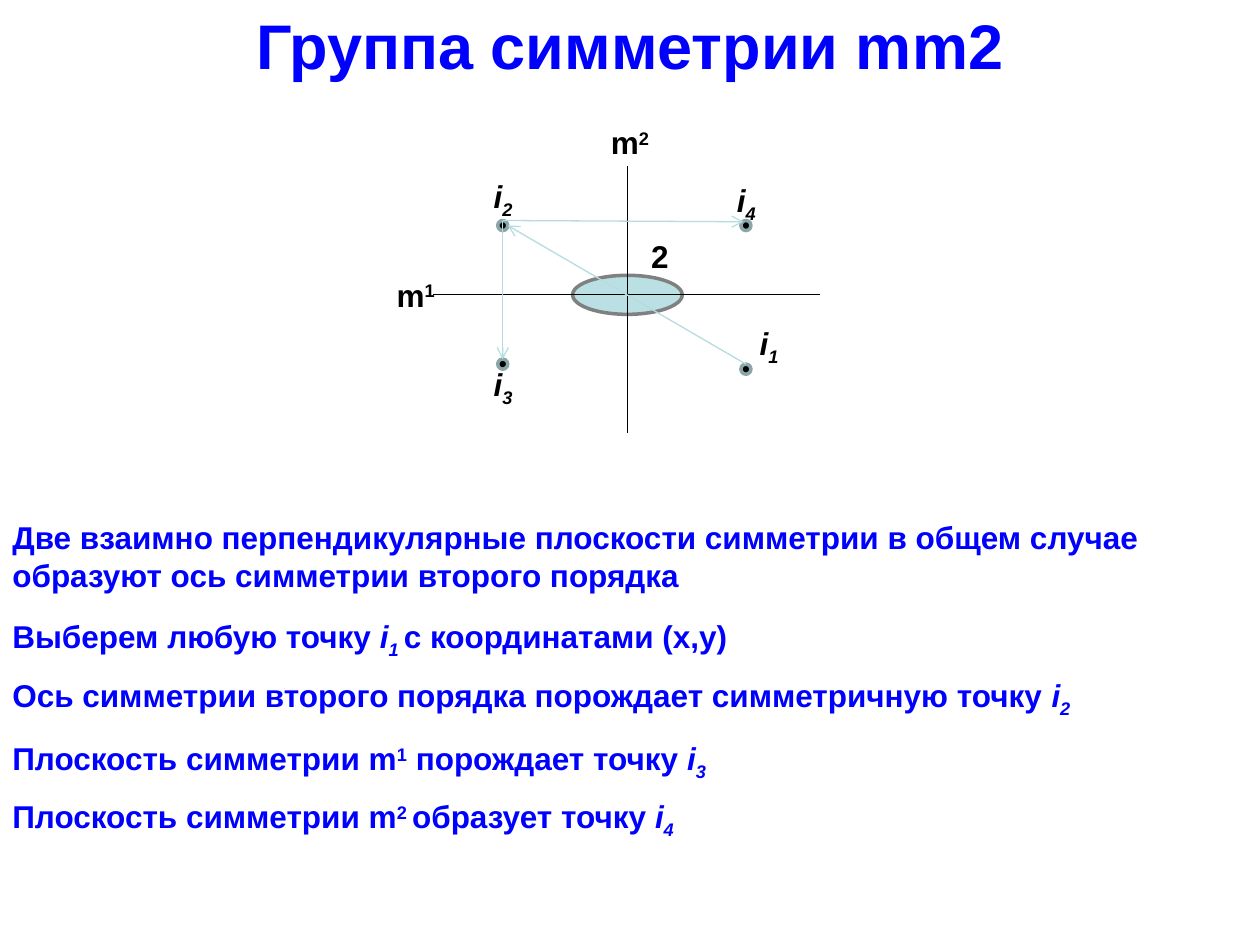
from lxml.etree import SubElement
from pptx import Presentation
from pptx.dml.color import RGBColor
from pptx.enum.shapes import MSO_CONNECTOR, MSO_SHAPE
from pptx.enum.text import MSO_ANCHOR, MSO_AUTO_SIZE, PP_ALIGN
from pptx.oxml.ns import qn
from pptx.util import Inches, Pt

BLUE = RGBColor(0x00, 0x00, 0xFF)
BLACK = RGBColor(0x00, 0x00, 0x00)
WHITE = RGBColor(0xFF, 0xFF, 0xFF)
GRAY = RGBColor(0x80, 0x80, 0x80)
AQUA = RGBColor(0xBB, 0xE0, 0xE3)
TEAL = RGBColor(0x8A, 0xA6, 0xA8)
PALE = RGBColor(0xB6, 0xDC, 0xDF)

BASE = {"name": "Arial", "size": Pt(18), "bold": True}
SHIFT = {"sup": 30000, "sub": -25000}


def apply(item, form):
    for key, value in form.items():
        setattr(item, key, value)


def write(shape, runs, color, wrap=True, align=PP_ALIGN.LEFT, size=Pt(18)):
    frame = shape.text_frame
    apply(frame, {"word_wrap": wrap, "auto_size": MSO_AUTO_SIZE.SHAPE_TO_FIT_TEXT,
                  "vertical_anchor": MSO_ANCHOR.TOP})
    para = frame.paragraphs[0]
    para.alignment = align
    for text, kind in runs:
        run = para.add_run()
        run.text = text
        apply(run.font, BASE | {"size": size, "italic": kind in ("var", "sub")})
        run.font.color.rgb = color
        if kind in SHIFT:
            run.font._element.set("baseline", str(SHIFT[kind]))


def oval(slide, mid, size, fill, edge):
    (x, y), (w, h) = mid, size
    shape = slide.shapes.add_shape(MSO_SHAPE.OVAL, Inches(x - w / 2), Inches(y - h / 2),
                                   Inches(w), Inches(h))
    shape.shadow.inherit = False
    shape.fill.solid()
    shape.fill.fore_color.rgb = fill
    shape.line.color.rgb = edge
    shape.line.width = Pt(2)


def link(slide, start, end, color, arrow=False):
    line = slide.shapes.add_connector(MSO_CONNECTOR.STRAIGHT,
                                      *map(Inches, (*start, *end)))
    line.line.color.rgb = color
    line.line.width = Pt(0.75)
    if arrow:
        SubElement(line.line._get_or_add_ln(), qn("a:tailEnd"), type="arrow")
    SubElement(line._element.spPr, qn("a:effectLst"))


def label(slide, x, y, width, runs):
    box = slide.shapes.add_textbox(Inches(x), Inches(y), Inches(width), Inches(0.4))
    write(box, runs, BLACK, wrap=False)


def scheme(slide, left, top, width, height):
    right, base = left + width, top + height
    mid, axis = left + 1.93, top + 1.41
    oval(slide, (mid, axis), (0.87, 0.31), AQUA, GRAY)
    link(slide, (mid, top + 0.39), (mid, base), BLACK)
    link(slide, (left + 0.39, axis), (right, axis), BLACK)

    west, east = left + 0.94, left + 2.87
    north, south = top + 0.86, top + 1.96
    for spot in ((east, top + 2), (west, north), (west, south), (east, north)):
        oval(slide, spot, (0.08, 0.08), BLACK, TEAL)

    upper = north - 0.04
    for start, end in (((east, south), (west + 0.04, north)),
                       ((west, upper), (west, south - 0.04)),
                       ((west, upper), (east - 0.02, upper + 0.01))):
        link(slide, start, end, PALE, arrow=True)

    label(slide, left + 2.02, top + 0.9, 0.34, [("2", "")])
    for num, x, y in (("1", 0, 1.21), ("2", 1.7, 0)):
        label(slide, left + x, top + y, 0.51, [("m", ""), (num, "sup")])
    for num, x, y in (("1", 2.88, 1.59), ("2", 0.77, 0.43),
                      ("3", 0.77, 1.92), ("4", 2.7, 0.46)):
        label(slide, left + x, top + y, 0.35, [("i", "var"), (num, "sub")])


def panel(slide, left, top, width, height, runs, **form):
    shape = slide.shapes.add_shape(MSO_SHAPE.RECTANGLE,
                                   *map(Inches, (left, top, width, height)))
    shape.shadow.inherit = False
    shape.fill.solid()
    shape.fill.fore_color.rgb = WHITE
    shape.line.fill.background()
    write(shape, runs, BLUE, **form)


def notes(slide, left, top, width):
    rows = (
        (0, 0.71, [("Две взаимно перпендикулярные плоскости симметрии в общем случае "
                    "образуют ось симметрии второго порядка", "")]),
        (0.79, 0.4, [("Выберем любую точку ", ""), ("i", "var"), ("1 ", "sub"),
                     ("с координатами (x,y)", "")]),
        (1.26, 0.4, [("Ось симметрии второго порядка порождает симметричную точку ", ""),
                     ("i", "var"), ("2", "sub")]),
        (1.76, 0.4, [("Плоскость симметрии m", ""), ("1", "sup"),
                     (" порождает точку ", ""), ("i", "var"), ("3", "sub")]),
        (2.22, 0.4, [("Плоскость симметрии m", ""), ("2 ", "sup"),
                     ("образует точку ", ""), ("i", "var"), ("4", "sub")]),
    )
    for y, height, runs in rows:
        panel(slide, left, top + y, width, height, runs)


def main():
    deck = Presentation()
    deck.slide_width, deck.slide_height = Inches(10), Inches(7.5)
    slide = deck.slides.add_slide(deck.slide_layouts[6])
    scheme(slide, 3.05, 0.93, 3.46, 2.51)
    panel(slide, 0, 0, 10, 0.71, [("Группа симметрии mm2", "")],
          align=PP_ALIGN.CENTER, size=Pt(36))
    notes(slide, 0, 4.06, 10)
    deck.save("out.pptx")


if __name__ == "__main__":
    main()
